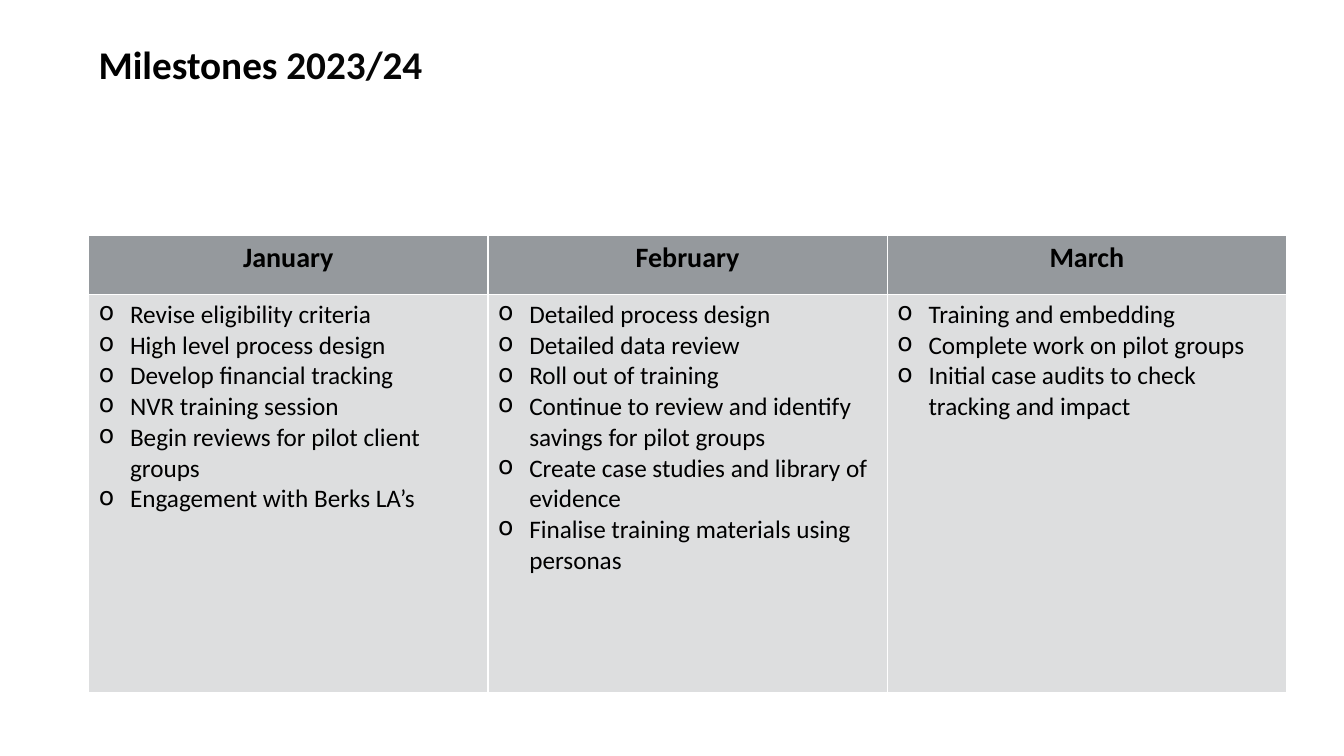
import pptx
import pptx.dml.color
import pptx.enum.text
import pptx.util
import lxml.etree
import pptx.oxml.ns

qn = pptx.oxml.ns.qn
Inches = pptx.util.Inches


def color(code):
    return pptx.dml.color.RGBColor.from_string(code)


def style_font(paragraph, size, bold):
    paragraph.font.name = "Calibri"
    paragraph.font.size = pptx.util.Pt(size)
    paragraph.font.bold = bold
    paragraph.font.color.rgb = color("000000")


months = {
    "January": [
        "Revise eligibility criteria",
        "High level process design",
        "Develop financial tracking",
        "NVR training session",
        "Begin reviews for pilot client groups",
        "Engagement with Berks LA’s",
    ],
    "February": [
        "Detailed process design",
        "Detailed data review",
        "Roll out of training",
        "Continue to review and identify savings for pilot groups",
        "Create case studies and library of evidence",
        "Finalise training materials using personas",
    ],
    "March": [
        "Training and embedding",
        "Complete work on pilot groups",
        "Initial case audits to check tracking and impact",
    ],
}

deck = pptx.Presentation()
deck.slide_width = Inches(13.33)
deck.slide_height = Inches(7.5)
slide = deck.slides.add_slide(deck.slide_layouts[6])

left = Inches(0.88)
month_width = Inches(3.96)
header_height = Inches(0.58)
tasks_height = Inches(3.95)
task_indent = Inches(0.31)

heading = slide.shapes.add_textbox(left, Inches(0.4), Inches(9.12), Inches(0.98)).text_frame
heading.word_wrap = True
heading_line = heading.paragraphs[0]
heading_line.line_spacing = 0.9
style_font(heading_line, 28, True)
for words, shade in [("Milestones ", "000000"), ("2023/24", "060606")]:
    part = heading_line.add_run()
    part.text = words
    part.font.color.rgb = color(shade)

plan = slide.shapes.add_table(
    2, len(months), left, Inches(2.34),
    month_width * len(months), header_height + tasks_height).table
plan.rows[0].height = header_height
plan.rows[1].height = tasks_height

for column, (month, tasks) in enumerate(months.items()):
    plan.columns[column].width = month_width
    header, body = plan.cell(0, column), plan.cell(1, column)

    for cell, shade in [(header, "95999D"), (body, "DDDEDF")]:
        borders = cell._tc.get_or_add_tcPr()
        for side in ["lnL", "lnR", "lnT", "lnB"]:
            border = lxml.etree.SubElement(borders, qn(f"a:{side}"), w=str(pptx.util.Pt(1)))
            ink = lxml.etree.SubElement(border, qn("a:solidFill"))
            lxml.etree.SubElement(ink, qn("a:srgbClr"), val="FFFFFF")
        cell.fill.solid()
        cell.fill.fore_color.rgb = color(shade)

    header.text = month
    month_line = header.text_frame.paragraphs[0]
    month_line.alignment = pptx.enum.text.PP_ALIGN.CENTER
    style_font(month_line, 20, True)

    body.text = "\n".join(tasks)
    for task_line in body.text_frame.paragraphs:
        properties = task_line._p.get_or_add_pPr()
        properties.set("marL", str(task_indent))
        properties.set("indent", str(-task_indent))
        lxml.etree.SubElement(properties, qn("a:buChar"), char="o")
        style_font(task_line, 18, False)

deck.save("out.pptx")
